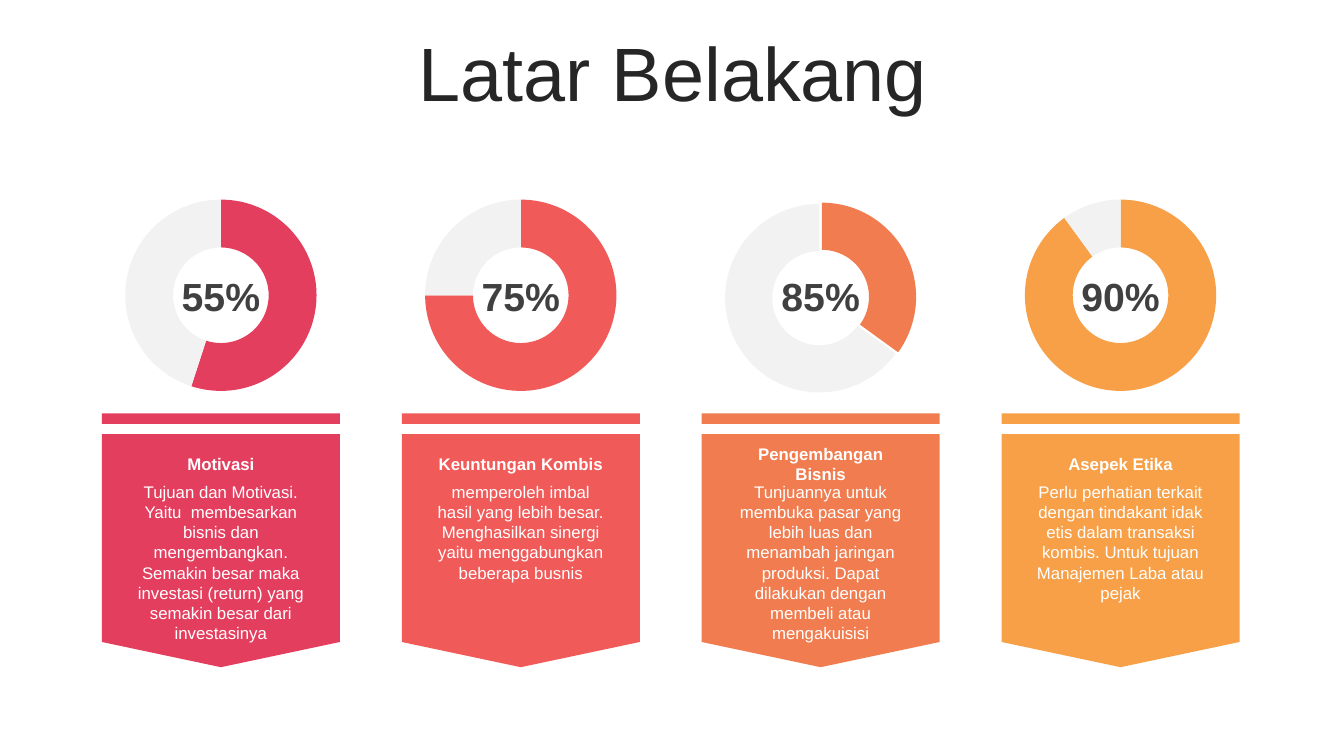
from lxml.etree import SubElement
from pptx import Presentation
from pptx.chart.data import CategoryChartData as Data
from pptx.dml.color import RGBColor as RGB
from pptx.enum.chart import XL_CHART_TYPE as Kind
from pptx.enum.shapes import MSO_SHAPE as Form
from pptx.enum.text import MSO_ANCHOR as Anchor, PP_ALIGN as Align
from pptx.oxml import parse_xml
from pptx.oxml.ns import nsdecls, qn
from pptx.util import Pt

FONT = "Arial"
DARK = RGB(0x26, 0x26, 0x26)
GRAY = RGB(0x40, 0x40, 0x40)
PALE = RGB(0xF2, 0xF2, 0xF2)
WHITE = RGB(0xFF, 0xFF, 0xFF)
BLACK = RGB(0, 0, 0)
ROSE = RGB(0xE4, 0x3E, 0x5F)
CORAL = RGB(0xF0, 0x5A, 0x59)
RUST = RGB(0xF0, 0x7C, 0x4F)
AMBER = RGB(0xF8, 0xA0, 0x47)

TITLE = "Latar Belakang"
CARDS = [
    (ROSE, 55, "55%", 0, "Motivasi",
     ["Tujuan dan Motivasi. Yaitu  membesarkan bisnis dan mengembangkan. "
      "Semakin besar maka investasi (return) yang semakin besar dari investasinya"]),
    (CORAL, 75, "75%", 0, "Keuntungan Kombis",
     ["memperoleh imbal hasil yang lebih besar.",
      "Menghasilkan sinergi yaitu menggabungkan beberapa busnis"]),
    (RUST, 35, "85%", 3, "Pengembangan Bisnis",
     ["Tunjuannya untuk membuka pasar yang lebih luas dan menambah jaringan "
      "produksi. Dapat dilakukan dengan membeli atau mengakuisisi"]),
    (AMBER, 90, "90%", 0, "Asepek Etika",
     ["Perlu perhatian terkait dengan tindakant idak etis dalam transaksi "
      "kombis. Untuk tujuan Manajemen Laba atau pejak"]),
]


def write(slide, box, lines, size, color, bold=False, anchor=Anchor.MIDDLE, gap=1.0):
    """Place centred lines of text in a box."""
    frame = slide.shapes.add_textbox(*map(Pt, box)).text_frame
    frame.word_wrap = True
    frame.vertical_anchor = anchor
    for i, line in enumerate(lines):
        para = frame.add_paragraph() if i else frame.paragraphs[0]
        para.alignment = Align.CENTER
        para.line_spacing = gap
        run = para.add_run()
        run.text = line
        font = run.font
        font.name, font.size, font.bold = FONT, Pt(size), bold
        font.color.rgb = color


def paint(shape, color):
    """Fill a shape flat, with no line or shadow."""
    shape.shadow.inherit = False
    shape.fill.solid()
    shape.fill.fore_color.rgb = color
    shape.line.fill.background()


def ring(slide, box, color, share, burst):
    """Draw a doughnut chart of one share and its rest."""
    data = Data()
    data.categories = ["1", "2"]
    data.add_series("Series 1", [share, 100 - share])
    chart = slide.shapes.add_chart(Kind.DOUGHNUT, *map(Pt, box), data).chart
    chart.has_legend = chart.has_title = False
    chart.font.name, chart.font.size = FONT, Pt(18)
    chart.font.color.rgb = BLACK
    plot = chart.plots[0]
    plot.vary_by_categories = True
    series = plot.series[0]
    if burst:
        mark = parse_xml(f'<c:explosion {nsdecls("c")} val="{burst}"/>')
        series._element.find(qn("c:tx")).addnext(mark)
    for i, tint in enumerate((color, PALE)):
        look = series.points[i].format
        look.fill.solid()
        look.fill.fore_color.rgb = tint
        look.line.fill.background()
    root = chart._chartSpace
    for hole in root.iter(qn("c:holeSize")):
        hole.set("val", "60")
    area = root.chart.plotArea
    for old in area.findall(qn("c:layout")):
        area.remove(old)
    frame = parse_xml(f'<c:layout {nsdecls("c")}/>')
    area.insert(0, frame)
    spot = SubElement(frame, qn("c:manualLayout"))
    top = 0.09 if burst else 0.08
    for tag, val in (("layoutTarget", "inner"), ("xMode", "edge"), ("yMode", "edge"),
                     ("x", 0.05), ("y", top), ("w", 0.9), ("h", 0.84)):
        SubElement(spot, qn("c:" + tag)).set("val", str(val))


def banner(slide, box, color, head, body):
    """Draw a bar over a pointed panel with its heading and text."""
    x, y, w, h = box
    paint(slide.shapes.add_shape(Form.RECTANGLE, Pt(x), Pt(y), Pt(w), Pt(7.5)), color)
    top, low, end = y + 15, y + h - 18, y + h
    pen = slide.shapes.build_freeform(Pt(x), Pt(top))
    pen.add_line_segments([(Pt(a), Pt(b)) for a, b in (
        (x + w, top), (x + w, low), (x + w / 2, end), (x, low))])
    paint(pen.convert_to_shape(), color)
    inner = x + 14.8, w - 29.6
    write(slide, (inner[0], y + 18, inner[1], 36), [head], 12, WHITE, True)
    write(slide, (inner[0], y + 45.3, inner[1], 124), body, 12, WHITE, anchor=Anchor.TOP)


def column(slide, box, card):
    """Stack a ring, its label and a banner in a box."""
    x, y, w, h = box
    color, share, label, burst, head, body = card
    ring(slide, (x + 8.5, y, w - 17, 162.7), color, share, burst)
    write(slide, (x + 48.4, y + 61.2, w - 96.8, 41), [label], 28, GRAY, True)
    banner(slide, (x, y + 165.6, w, h - 165.6), color, head, body)


def main():
    """Build the slide and save it."""
    deck = Presentation()
    deck.slide_width, deck.slide_height = Pt(960), Pt(540)
    slide = deck.slides.add_slide(deck.slide_layouts[6])
    write(slide, (25, 26.6, 911.5, 57), [TITLE], 54, DARK, gap=0.9)
    for i, card in enumerate(CARDS):
        column(slide, (72.8 + 214.2 * i, 129.6, 170, 347), card)
    deck.save("out.pptx")


if __name__ == "__main__":
    main()
